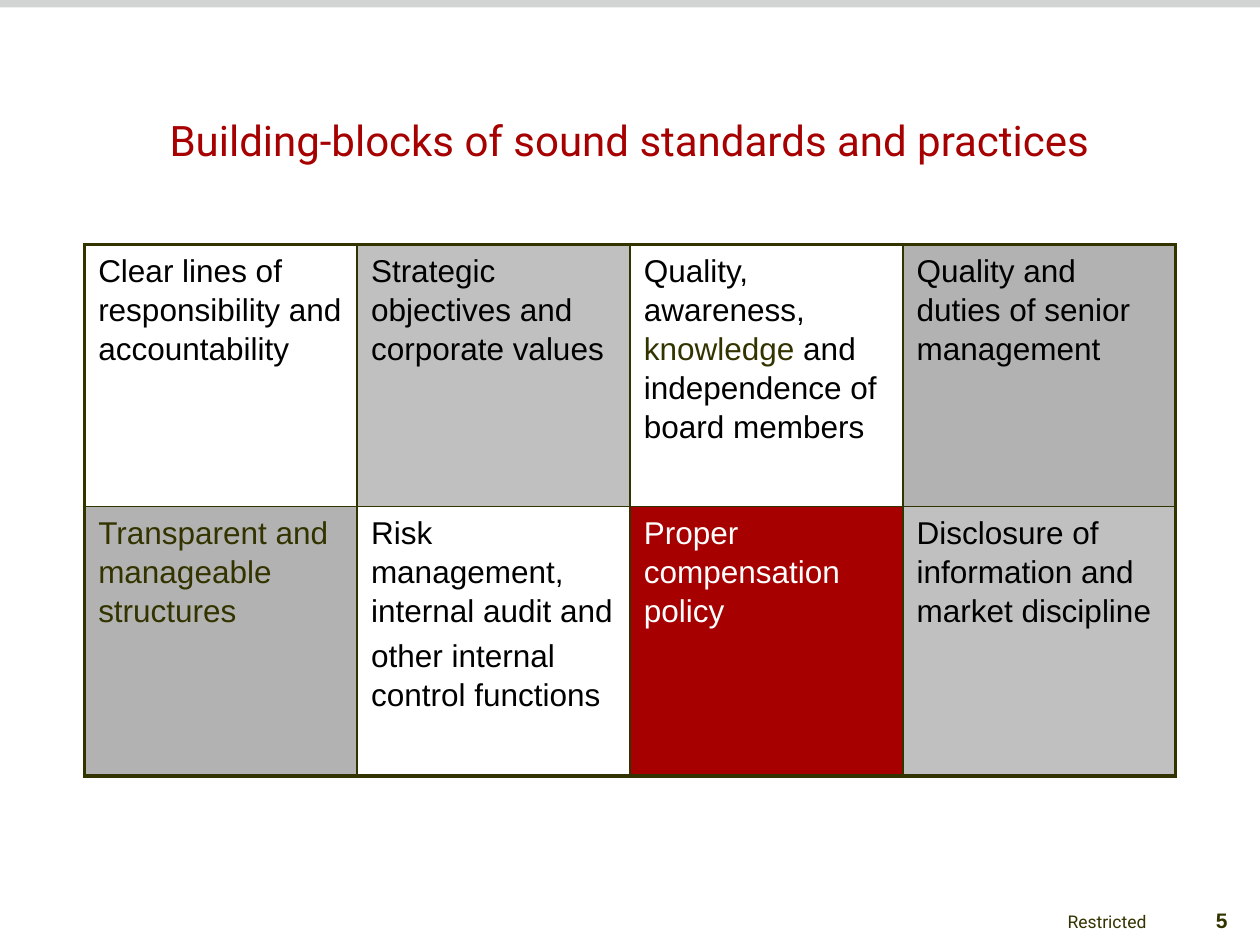
from typing import NamedTuple

from lxml import etree
from pptx import Presentation
from pptx.dml.color import RGBColor
from pptx.enum.shapes import MSO_SHAPE
from pptx.enum.text import PP_ALIGN
from pptx.oxml.ns import qn
from pptx.util import Inches, Pt

RECTANGLE = MSO_SHAPE.RECTANGLE
CENTER, RIGHT = PP_ALIGN.CENTER, PP_ALIGN.RIGHT
WHITE, BLACK, OLIVE, RED = "FFFFFF", "000000", "333300", "A60000"
SILVER, GREY, BAND_GREY = "C0C0C0", "B2B2B2", "D2D4D4"
OUTER_WIDTH, INNER_WIDTH = 2.25, 1


class Run(NamedTuple):
    text: str
    color: str = BLACK


class Block(NamedTuple):
    fill: str
    paragraphs: list[list[Run]]


class Label(NamedTuple):
    text: str
    left: float
    top: float
    width: float
    height: float
    size: float
    font: str
    color: str
    align: PP_ALIGN
    bold: bool = False
    inset: tuple[float, float] = (0.1, 0.05)


LABELS = [
    Label("Restricted ", 7.44, 7.18, 1.79, 0.27, 10, "Roboto", OLIVE, RIGHT),
    Label("5", 9.39, 7.15, 0.61, 0.35, 12, "Arial", OLIVE, CENTER, bold=True),
    Label("Building-blocks of sound standards and practices",
          0.67, 0.91, 8.65, 0.87, 24, "Roboto", RED, CENTER, inset=(0, 0)),
]

BUILDING_BLOCKS = [
    [
        Block(WHITE, [[Run("Clear lines of responsibility and accountability")]]),
        Block(SILVER, [[Run("Strategic objectives and corporate values")]]),
        Block(WHITE, [[Run("Quality, awareness, "), Run("knowledge ", OLIVE),
                       Run("and independence of board members")]]),
        Block(GREY, [[Run("Quality and duties of senior management")]]),
    ],
    [
        Block(GREY, [[Run("Transparent and manageable structures", OLIVE)]]),
        Block(WHITE, [[Run("Risk management, internal audit and")],
                      [Run("other internal control functions")]]),
        Block(RED, [[Run("Proper compensation policy", WHITE)]]),
        Block(SILVER, [[Run("Disclosure of information and market discipline")]]),
    ],
]
COLUMN_WIDTH = 2.165
ROW_HEIGHTS = [2.08, 2.14]


def rgb(color: str) -> RGBColor:
    return RGBColor.from_string(color)


def add_run(paragraph, text: str, size: float, font: str, color: str, bold: bool = False) -> None:
    run = paragraph.add_run()
    run.text = text
    run.font.size = Pt(size)
    run.font.name = font
    run.font.bold = bold
    run.font.color.rgb = rgb(color)


def draw_label(slide, label: Label) -> None:
    box = slide.shapes.add_textbox(Inches(label.left), Inches(label.top),
                                   Inches(label.width), Inches(label.height))
    frame = box.text_frame
    frame.word_wrap = True
    horizontal, vertical = label.inset
    frame.margin_left = frame.margin_right = Inches(horizontal)
    frame.margin_top = frame.margin_bottom = Inches(vertical)
    paragraph = frame.paragraphs[0]
    paragraph.alignment = label.align
    add_run(paragraph, label.text, label.size, label.font, label.color, label.bold)


def set_borders(cell, outer_sides: dict[str, bool]) -> None:
    properties = cell._tc.get_or_add_tcPr()
    for position, (side, outer) in enumerate(outer_sides.items()):
        line = etree.Element(qn(f"a:ln{side}"))
        line.set("w", str(Pt(OUTER_WIDTH if outer else INNER_WIDTH)))
        fill = etree.SubElement(line, qn("a:solidFill"))
        etree.SubElement(fill, qn("a:srgbClr")).set("val", OLIVE)
        properties.insert(position, line)


def fill_block(cell, block: Block) -> None:
    cell.fill.solid()
    cell.fill.fore_color.rgb = rgb(block.fill)
    cell.margin_left = cell.margin_right = Inches(0.11)
    cell.margin_top = cell.margin_bottom = Inches(0.05)
    frame = cell.text_frame
    for index, runs in enumerate(block.paragraphs):
        paragraph = frame.add_paragraph() if index else frame.paragraphs[0]
        paragraph.line_spacing = 1.1
        if index:
            paragraph.space_before = Pt(3.6)
        for run in runs:
            add_run(paragraph, run.text, 18, "Arial", run.color)


def draw_blocks(slide, rows: list[list[Block]]) -> None:
    row_count, column_count = len(rows), len(rows[0])
    table = slide.shapes.add_table(
        row_count, column_count, Inches(0.67), Inches(1.94),
        Inches(COLUMN_WIDTH * column_count), Inches(sum(ROW_HEIGHTS))).table
    table.first_row = table.horz_banding = False
    for column in table.columns:
        column.width = Inches(COLUMN_WIDTH)
    for r, blocks in enumerate(rows):
        table.rows[r].height = Inches(ROW_HEIGHTS[r])
        for c, block in enumerate(blocks):
            cell = table.cell(r, c)
            fill_block(cell, block)
            set_borders(cell, {"L": c == 0, "R": c == column_count - 1,
                               "T": r == 0, "B": r == row_count - 1})


def main() -> None:
    presentation = Presentation()
    presentation.slide_width, presentation.slide_height = Inches(10), Inches(7.5)
    slide = presentation.slides.add_slide(presentation.slide_layouts[6])
    top_band = slide.shapes.add_shape(RECTANGLE, 0, 0, Inches(10), Inches(0.06))
    top_band.shadow.inherit = False
    top_band.fill.solid()
    top_band.fill.fore_color.rgb = rgb(BAND_GREY)
    top_band.line.fill.background()
    for label in LABELS:
        draw_label(slide, label)
    draw_blocks(slide, BUILDING_BLOCKS)
    presentation.save("out.pptx")


if __name__ == "__main__":
    main()
